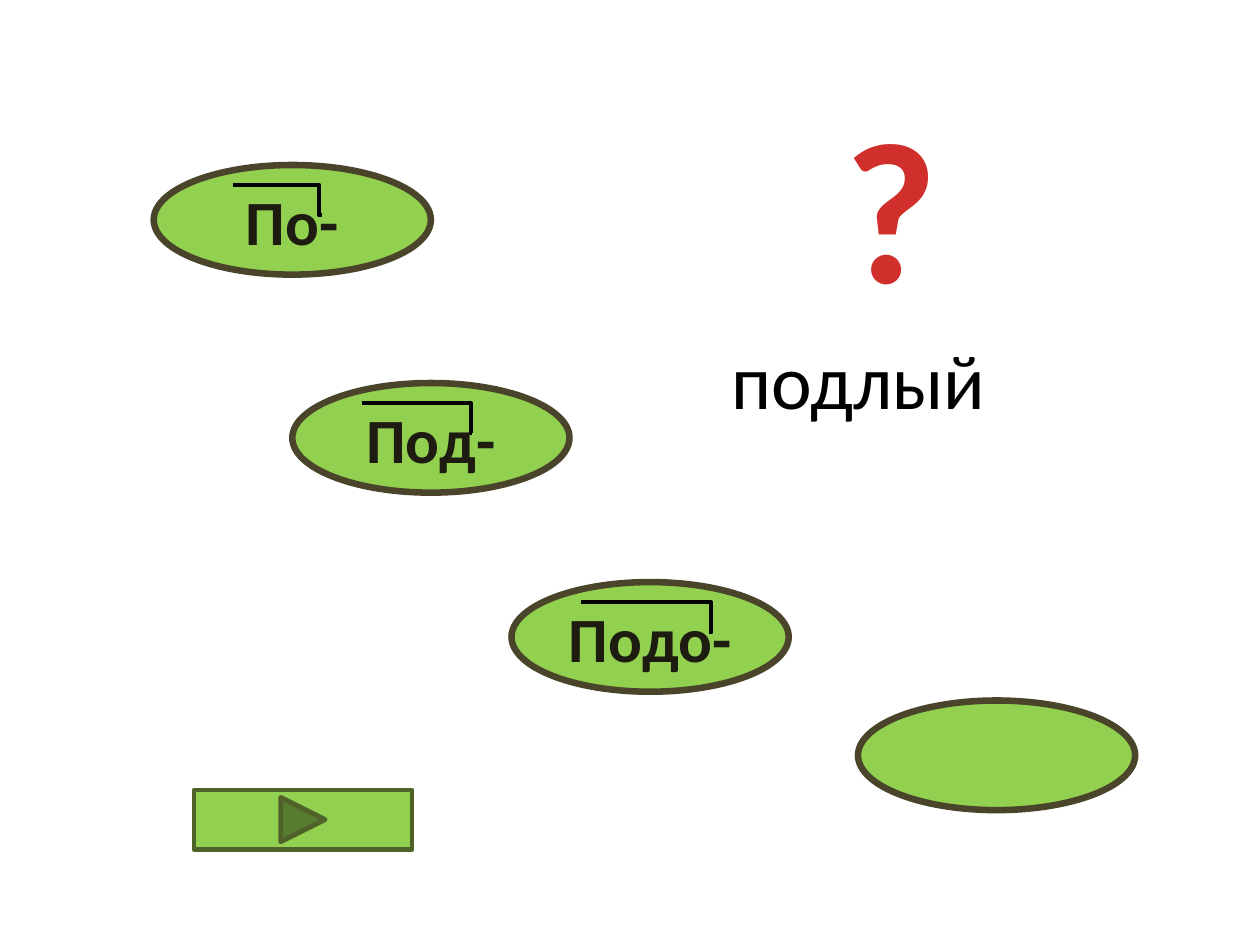
"""Build a slide that asks which prefix fits the word."""
from dataclasses import dataclass

import pptx
import pptx.dml.color
import pptx.enum.shapes
import pptx.enum.text
import pptx.oxml
import pptx.oxml.ns
import pptx.util
from pptx.util import Inches

FONT = "Calibri"
GREEN = "92D050"
OVAL_WIDTH, OVAL_HEIGHT = 2.2, 0.87
MARK_DROP, MARK_HEIGHT = 0.16, 0.24
SHAPES = pptx.enum.shapes.MSO_SHAPE
ALIGN = pptx.enum.text.PP_ALIGN


@dataclass
class Prefix:
    text: str
    left: float
    top: float
    mark_left: float
    mark_width: float
    bend: int


@dataclass
class Label:
    text: str
    left: float
    top: float
    width: float
    height: float
    size: int
    color: str
    bold: bool
    align: ALIGN


PREFIXES = [
    Prefix("По-", 1.22, 1.31, 1.85, 0.71, 96500),
    Prefix("Под-", 2.32, 3.04, 2.87, 0.87, 99900),
    Prefix("Подо-", 4.06, 4.62, 4.61, 1.02, 101400),
]
LABELS = [
    Label("подлый", 5.71, 2.59, 3.15, 0.84, 44, "000000", False, ALIGN.LEFT),
    Label("?", 6.34, 0.6, 1.46, 2.04, 115, "D02F2C", True, ALIGN.CENTER),
]


def rgb(color: str) -> pptx.dml.color.RGBColor:
    return pptx.dml.color.RGBColor.from_string(color)


def write(shape, text: str, size: int, color: str, bold: bool, align: ALIGN) -> None:
    shape.text_frame.text = text
    para = shape.text_frame.paragraphs[0]
    para.alignment = align
    font = para.runs[0].font
    font.name, font.size, font.bold = FONT, pptx.util.Pt(size), bold
    font.color.rgb = rgb(color)


def add_green(shapes, kind: SHAPES, left: float, top: float, width: float,
              height: float, line: str, weight: float):
    shape = shapes.add_shape(kind, Inches(left), Inches(top), Inches(width), Inches(height))
    shape.shadow.inherit = False
    shape.fill.solid()
    shape.fill.fore_color.rgb = rgb(GREEN)
    shape.line.color.rgb = rgb(line)
    shape.line.width = pptx.util.Pt(weight)
    return shape


def add_oval(shapes, left: float, top: float):
    return add_green(shapes, SHAPES.OVAL, left, top, OVAL_WIDTH, OVAL_HEIGHT, "4A452A", 3.75)


def add_prefix(page, prefix: Prefix) -> None:
    group = page.shapes.add_group_shape()
    oval = add_oval(group.shapes, prefix.left, prefix.top)
    write(oval, prefix.text, 36, "1E1C11", True, ALIGN.CENTER)
    oval.text_frame.vertical_anchor = pptx.enum.text.MSO_ANCHOR.MIDDLE
    mark_top = prefix.top + MARK_DROP
    mark = group.shapes.add_connector(
        pptx.enum.shapes.MSO_CONNECTOR.ELBOW,
        Inches(prefix.mark_left), Inches(mark_top),
        Inches(prefix.mark_left + prefix.mark_width), Inches(mark_top + MARK_HEIGHT))
    mark.line.color.rgb = rgb("000000")
    mark.line.width = pptx.util.Pt(2.25)
    properties = mark._element.spPr
    guides = properties.find(".//" + pptx.oxml.ns.qn("a:avLst"))
    guides.append(pptx.oxml.parse_xml(
        f'<a:gd {pptx.oxml.ns.nsdecls("a")} name="adj1" fmla="val {prefix.bend}"/>'))
    properties.append(pptx.oxml.parse_xml(f'<a:effectLst {pptx.oxml.ns.nsdecls("a")}/>'))


def add_label(page, label: Label) -> None:
    box = page.shapes.add_textbox(Inches(label.left), Inches(label.top),
                                  Inches(label.width), Inches(label.height))
    box.text_frame.word_wrap = True
    box.text_frame.auto_size = pptx.enum.text.MSO_AUTO_SIZE.SHAPE_TO_FIT_TEXT
    write(box, label.text, label.size, label.color, label.bold, label.align)


def main() -> None:
    deck = pptx.Presentation()
    deck.slide_width, deck.slide_height = Inches(10), Inches(7.5)
    page = deck.slides.add_slide(deck.slide_layouts[6])
    for prefix in PREFIXES:
        add_prefix(page, prefix)
    add_oval(page.shapes, 6.81, 5.56)
    add_green(page.shapes, SHAPES.ACTION_BUTTON_FORWARD_OR_NEXT,
              1.54, 6.27, 1.73, 0.47, "4F6228", 2.75)
    for label in LABELS:
        add_label(page, label)
    deck.save("out.pptx")


if __name__ == "__main__":
    main()
